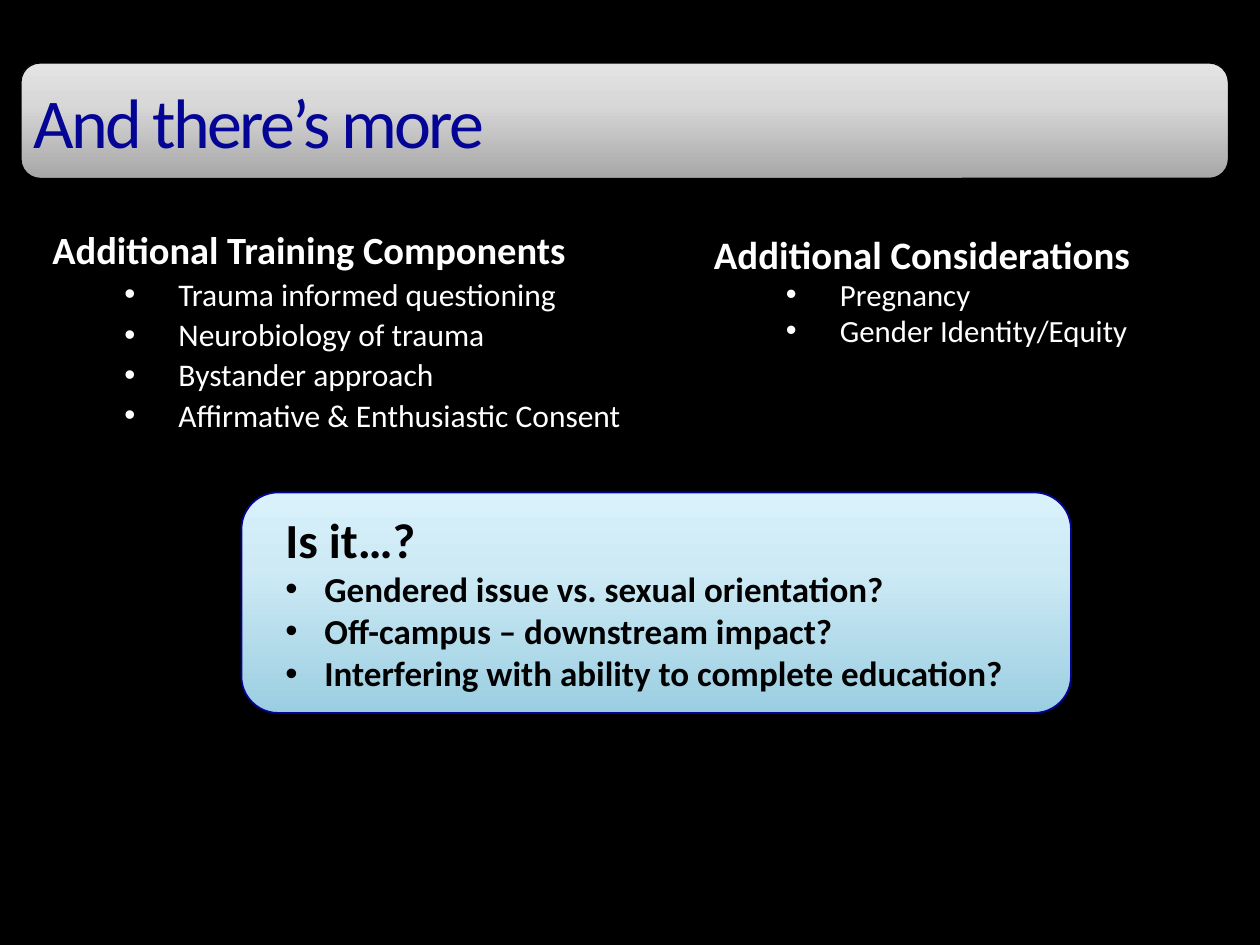
from copy import deepcopy
from dataclasses import dataclass

from lxml.etree import SubElement
from pptx import Presentation
from pptx.dml.color import RGBColor
from pptx.enum.shapes import MSO_SHAPE as Preset
from pptx.enum.text import MSO_ANCHOR as Anchor, MSO_AUTO_SIZE as AutoSize, PP_ALIGN as Align
from pptx.oxml.ns import qn
from pptx.util import Emu, Inches, Pt

COLUMNS, ROWS = 120, 90
CELL = Inches(10) // COLUMNS
NAVY, WHITE, BLACK = "050595", "FFFFFF", "000000"


@dataclass(frozen=True)
class Area:
    """A place on the slide grid, in columns and rows."""
    column: float
    row: float
    columns: float
    rows: float


@dataclass(frozen=True)
class BulletList:
    heading: str
    items: tuple[str, ...]
    heading_size: float
    item_size: float
    color: str
    margin: float
    hanging: float
    level: int = 0
    items_bold: bool = False
    line_spacing: float = 1.0
    space_share: float = 0.0


@dataclass(frozen=True)
class Panel:
    area: Area
    stops: tuple[tuple[float, str], ...]
    line_color: str
    line_width: float


BAR = Panel(Area(2, 6, 115, 11),
            ((0, "A7A7A7"), (0.65, "D8D8D8"), (1, "E4E4E4")), BLACK, 0.75)
QUESTION_PANEL = Panel(Area(23, 46.9, 79, 21),
                       ((0, "9BCEE1"), (0.65, "CDEAF5"), (1, "D9F1FB")), NAVY, 1)

TRAINING = BulletList(
    "Additional Training Components",
    ("Trauma informed questioning", "Neurobiology of trauma",
     "Bystander approach", "Affirmative & Enthusiastic Consent"),
    22, 18, WHITE, 1, 0.43, level=1, line_spacing=0.9, space_share=0.2)
CONSIDERATIONS = BulletList(
    "Additional Considerations", ("Pregnancy", "Gender Identity/Equity"),
    22.2, 17.6, WHITE, 1, 0.43, level=1, line_spacing=0.8, space_share=0.2)
QUESTIONS = BulletList(
    "Is it…?",
    ("Gendered issue vs. sexual orientation?", "Off-campus – downstream impact?",
     "Interfering with ability to complete education?"),
    28, 20, BLACK, 0.31, 0.31, items_bold=True)


def rgb(color: str) -> RGBColor:
    return RGBColor.from_string(color)


def set_all(target, **values) -> None:
    for name, value in values.items():
        setattr(target, name, value)


def bounds(area: Area) -> dict:
    sides = zip(("left", "top", "width", "height"),
                (area.column, area.row, area.columns, area.rows))
    return {name: Emu(round(cells * CELL)) for name, cells in sides}


def add_run(paragraph, text: str, size: float, color: str, bold: bool = False):
    run = paragraph.add_run()
    run.text = text
    set_all(run.font, name="Calibri", size=Pt(size), bold=bold)
    run.font.color.rgb = rgb(color)
    return run


def add_panel(slide, panel: Panel) -> None:
    shape = slide.shapes.add_shape(Preset.ROUNDED_RECTANGLE, **bounds(panel.area))
    shape.shadow.inherit = False
    shape.fill.gradient()
    shape.fill.gradient_angle = 90
    stop_list = next(shape._element.spPr.iter(qn("a:gsLst")))
    stop_list.append(deepcopy(stop_list[-1]))
    for stop, (position, color) in zip(shape.fill.gradient_stops, panel.stops):
        stop.position = position
        stop.color.rgb = rgb(color)
    shape.line.color.rgb = rgb(panel.line_color)
    shape.line.width = Pt(panel.line_width)


def set_bullet(paragraph, margin: float, hanging: float, character: str = "") -> None:
    properties = paragraph._p.get_or_add_pPr()
    properties.set("marL", str(Inches(margin)))
    properties.set("indent", str(-Inches(hanging)))
    if character:
        SubElement(properties, qn("a:buFont")).set("typeface", "Arial")
        SubElement(properties, qn("a:buChar")).set("char", character)
    else:
        SubElement(properties, qn("a:buNone"))


def write_list(frame, content: BulletList) -> None:
    heading = frame.paragraphs[0]
    set_all(heading, line_spacing=content.line_spacing, space_before=Pt(0))
    set_bullet(heading, 0, 0)
    add_run(heading, content.heading, content.heading_size, content.color, True)
    for item in content.items:
        paragraph = frame.add_paragraph()
        set_all(paragraph, level=content.level, line_spacing=content.line_spacing,
                space_before=Pt(content.item_size * content.space_share))
        set_bullet(paragraph, content.margin, content.hanging, "•")
        add_run(paragraph, item, content.item_size, content.color, content.items_bold)


def fill_body(placeholder, area: Area, content: BulletList) -> None:
    set_all(placeholder, **bounds(area))
    set_all(placeholder.text_frame, margin_left=0, margin_top=0, margin_right=0,
            margin_bottom=0, auto_size=AutoSize.NONE, word_wrap=True)
    write_list(placeholder.text_frame, content)


def fill_title(slide, text: str) -> None:
    title = slide.shapes.title
    set_all(title, **bounds(BAR.area))
    set_all(title.text_frame, vertical_anchor=Anchor.MIDDLE,
            auto_size=AutoSize.NONE, word_wrap=True)
    paragraph = title.text_frame.paragraphs[0]
    paragraph.alignment = Align.LEFT
    run = add_run(paragraph, text, 40, NAVY)
    run.font._element.set("spc", "-150")
    slide.shapes._spTree.append(title._element)  # in front of the bar


def main() -> None:
    presentation = Presentation()
    set_all(presentation, slide_width=CELL * COLUMNS, slide_height=CELL * ROWS)
    slide = presentation.slides.add_slide(presentation.slide_layouts[3])
    slide.background.fill.solid()
    slide.background.fill.fore_color.rgb = rgb(BLACK)

    add_panel(slide, BAR)
    fill_title(slide, "And there’s more")
    fill_body(slide.placeholders[1], Area(5, 22, 56.5, 23.4), TRAINING)
    fill_body(slide.placeholders[2], Area(68, 22.8, 49, 11), CONSIDERATIONS)

    add_panel(slide, QUESTION_PANEL)
    question_box = slide.shapes.add_textbox(**bounds(Area(26, 47.9, 73, 19)))
    set_all(question_box.text_frame, word_wrap=True, auto_size=AutoSize.SHAPE_TO_FIT_TEXT)
    write_list(question_box.text_frame, QUESTIONS)
    presentation.save("out.pptx")


if __name__ == "__main__":
    main()
